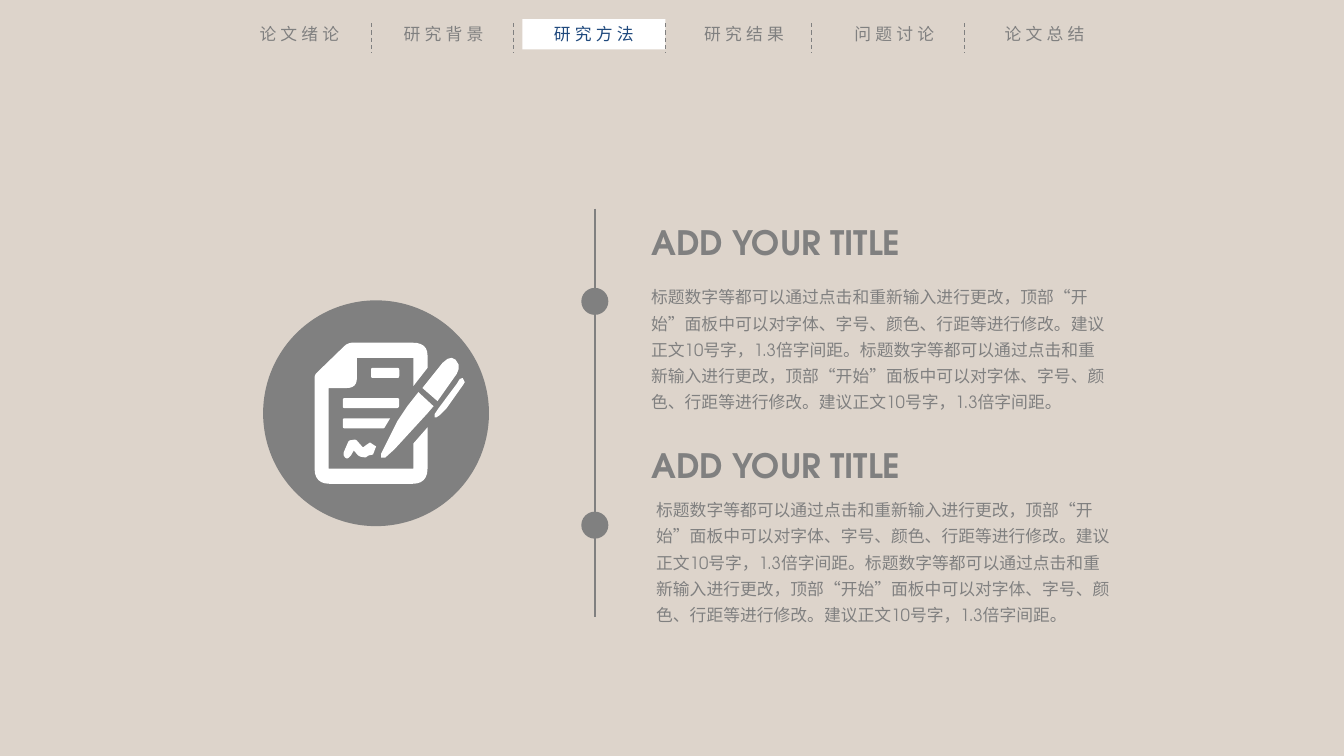
from pptx import Presentation, util as u
from pptx.dml.color import RGBColor
from pptx.enum import dml, shapes, text
from pptx.oxml.ns import qn
from lxml import etree

PX = 9144  # 100 px to the inch


class Theme:
    back, grey, white, blue = "DDD4CB", "808080", "FFFFFF", "1F497D"
    latin, cjk = "TeX Gyre Adventor", "Noto Sans CJK SC"
    title = dict(size=u.Pt(24), bold=True, name=latin)
    body = dict(size=u.Pt(12), name=latin)
    tab = dict(size=u.Pt(12), name=cjk)


TABS = ["论文绪论", "研究背景", "研究方法", "研究结果", "问题讨论", "论文总结"]
CURRENT_TAB = "研究方法"
TITLE = "ADD YOUR TITLE"
BODY = ("标题数字等都可以通过点击和重新输入进行更改，顶部“开始”面板中可以对字体、"
        "字号、颜色、行距等进行修改。建议正文10号字，1.3倍字间距。") * 2

# Corners are (x, y) or (x, y, radius), in px from the disc's corner.
PAGE = [(149, 85), (149, 57), (93, 57), (93, 87, 10), (65, 87), (65, 167),
        (149, 167), (149, 142), (163, 126), (163, 182, 15), (51, 182, 15),
        (51, 74, 3), (84, 42, 5), (163, 42, 15), (163, 67)]
NIB = [(154, 91), (169, 105), (163, 112), (130, 148), (121, 156),
       (117, 156), (117, 152), (124, 138), (133, 120), (143, 105)]
BARREL = [(173, 100), (158, 87), (178, 62), (183, 58), (187, 57),
          (191, 59), (194, 64), (194, 68), (192, 73)]
CLIP = [(200, 81), (199, 83), (182, 107), (175, 114), (172, 116), (170, 116),
        (170, 113), (174, 107), (192, 83), (195, 78), (198, 77)]
TAG = [(107, 67, 2), (135, 67, 2), (135, 77, 2), (107, 77, 2)]
LONG_LINE = [(79, 97, 2), (135, 97, 2), (135, 107, 3), (79, 107, 2)]
SHORT_LINE = [(79, 117, 2), (126, 117), (120, 127, 1), (79, 127, 2)]
SIGNATURE = [(109, 153), (104, 154, 2), (102, 156, 1), (95, 155, 3),
             (90, 149), (87, 154), (83, 158, 3), (79, 153, 3), (85, 139, 2),
             (92, 138, 2), (99, 146), (103, 143), (106, 141, 1),
             (109, 143), (112, 145)]
ICON = [PAGE, NIB, BARREL, LONG_LINE, SHORT_LINE, SIGNATURE, CLIP, TAG]


def px(*lengths):
    return [n * PX for n in lengths]


def rgb(code):
    return RGBColor.from_string(code)


def paint(sp, fill, width=None):
    sp.shadow.inherit = False
    sp.fill.solid()
    sp.fill.fore_color.rgb = rgb(fill)
    if width is None:
        sp.line.fill.background()
    else:
        sp.line.color.rgb, sp.line.width = rgb(fill), u.Pt(width)


def write(sp, words, fmt, color, **para):
    tf = sp.text_frame
    tf.word_wrap = True
    tf.auto_size = text.MSO_AUTO_SIZE.SHAPE_TO_FIT_TEXT
    p = tf.paragraphs[0]
    for key, value in para.items():
        setattr(p, key, value)
    r = p.add_run()
    r.text = words
    for key, value in fmt.items():
        setattr(r.font, key, value)
    r.font.color.rgb = rgb(color)
    etree.SubElement(r.font._element, qn("a:ea"), typeface=Theme.cjk)
    return r


def vertical(s, x, top, bottom, width, dash=None):
    line = s.shapes.add_connector(shapes.MSO_CONNECTOR.STRAIGHT, *px(x, top, x, bottom))
    line.line.color.rgb, line.line.width = rgb(Theme.grey), u.Pt(width)
    line.line.dash_style = dash
    etree.SubElement(line._element.spPr, qn("a:effectLst"))


def rounded(corners):
    """Points of a closed outline, each corner with a radius drawn as a short curve."""
    points = []
    for i, (x, y, *radius) in enumerate(corners):
        if not radius:
            points.append((x, y))
            continue
        ends = []
        for nx, ny, *_ in (corners[i - 1], corners[(i + 1) % len(corners)]):
            part = min(0.5, radius[0] / ((nx - x) ** 2 + (ny - y) ** 2) ** 0.5)
            ends.append((x + (nx - x) * part, y + (ny - y) * part))
        (ax, ay), (bx, by) = ends
        for t in (k / 6 for k in range(7)):
            a, m, b = (1 - t) ** 2, 2 * t * (1 - t), t * t
            points.append((a * ax + m * x + b * bx, a * ay + m * y + b * by))
    return points


def document_icon(s, left, top, size):
    disc = s.shapes.add_shape(shapes.MSO_SHAPE.OVAL, *px(left, top, size, size))
    paint(disc, Theme.grey)
    for corners in ICON:
        points = [px(left + x, top + y) for x, y in rounded(corners)]
        builder = s.shapes.build_freeform(*points[0])
        builder.add_line_segments(points[1:], close=True)
        paint(builder.convert_to_shape(), Theme.white)


def timeline(s, x, top, bottom, dots, size=24):
    vertical(s, x, top, bottom, 1.5)
    for y in dots:
        dot = s.shapes.add_shape(shapes.MSO_SHAPE.OVAL,
                                 *px(x - size // 2, y, size, size))
        paint(dot, Theme.grey, 2)


def text_block(s, left, top, body_dx, body_dy):
    write(s.shapes.add_textbox(*px(left, top, 329, 50)), TITLE, Theme.title, Theme.grey)
    write(s.shapes.add_textbox(*px(left + body_dx, top + body_dy, 470, 140)),
          BODY, Theme.body, Theme.grey, line_spacing=1.3)


def navigation(s, left, top, pitch, width, height, dividers):
    for i, name in enumerate(TABS):
        # the first tab sits a little closer to its neighbour
        x = left + i * pitch if i else left + 6
        box = px(x, top, width, height)
        if name == CURRENT_TAB:
            sp, color = s.shapes.add_shape(shapes.MSO_SHAPE.RECTANGLE, *box), Theme.blue
            paint(sp, Theme.white)
        else:
            sp, color = s.shapes.add_textbox(*box), Theme.grey
        r = write(sp, name, Theme.tab, color, alignment=text.PP_ALIGN.CENTER)
        r.font._element.set("spc", "300")
    for x in dividers:
        vertical(s, x, top + 4, top + 33, 0.75, dml.MSO_LINE.DASH)


def main():
    prs = Presentation()
    prs.slide_width, prs.slide_height = px(1333, 750)
    s = prs.slides.add_slide(prs.slide_layouts[6])
    s.background.fill.solid()
    s.background.fill.fore_color.rgb = rgb(Theme.back)
    document_icon(s, 261, 298, 224)
    timeline(s, 590, 207, 612, dots=(287, 509))
    text_block(s, 636, 215, 0, 59)
    text_block(s, 636, 436, 5, 49)
    navigation(s, 220, 19, 149, 142, 30, dividers=(368, 509, 660, 805, 957))
    prs.save("out.pptx")


if __name__ == "__main__":
    main()
